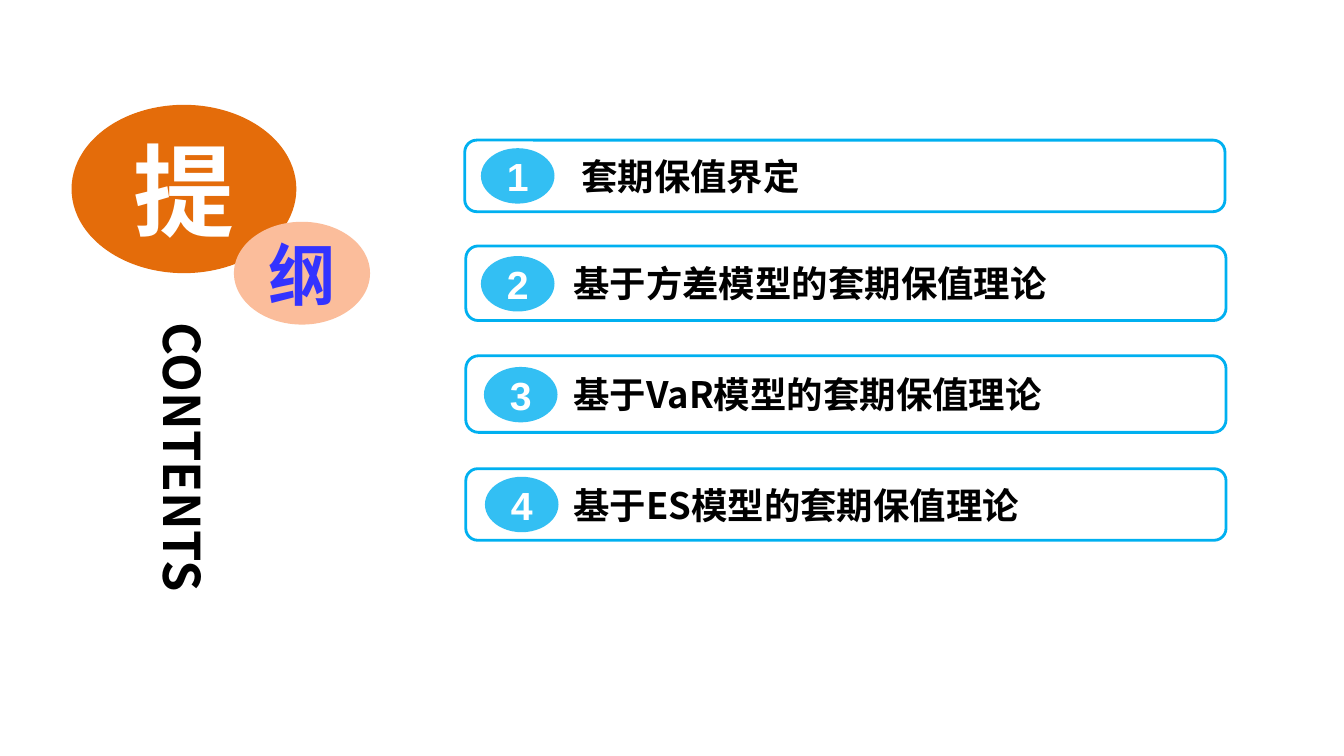
from lxml.etree import SubElement
from pptx import Presentation
from pptx.dml.color import RGBColor
from pptx.enum.shapes import MSO_SHAPE as SHAPE
from pptx.enum.text import MSO_ANCHOR as ANCHOR, PP_ALIGN as ALIGN
from pptx.oxml.ns import qn
from pptx.util import Inches, Pt

COLORS = {
    "white": "FFFFFF",
    "black": "000000",
    "blue": "00B0F0",
    "orange": "E46C0A",
    "peach": "FBBD9B",
    "violet": "3333FF",
}
CJK = "Noto Sans CJK SC"


def add_panel(kind, left, top, width, height, fill):
    panel = slide.shapes.add_shape(
        kind, Inches(left), Inches(top), Inches(width), Inches(height))
    panel.shadow.inherit = False
    panel.fill.solid()
    panel.fill.fore_color.rgb = RGBColor.from_string(COLORS[fill])
    panel.line.fill.background()
    return panel


def write(holder, text, size, color, font=CJK, align=ALIGN.CENTER, margin=0):
    frame = holder.text_frame
    frame.margin_left = Inches(margin)
    frame.margin_right = frame.margin_top = frame.margin_bottom = 0
    frame.vertical_anchor = ANCHOR.MIDDLE
    frame.text = text
    paragraph = frame.paragraphs[0]
    paragraph.alignment = align
    run = paragraph.runs[0]
    run.font.size = Pt(size)
    run.font.bold = True
    run.font.name = font
    run.font.color.rgb = RGBColor.from_string(COLORS[color])
    SubElement(run.font._element, qn("a:ea"), typeface=font)


deck = Presentation()
deck.slide_width = Inches(13.33)
deck.slide_height = Inches(7.5)
slide = deck.slides.add_slide(deck.slide_layouts[6])

topics = [
    ("套期保值界定", 4.61, 1.39, 0.71, 4.77, 1.47, 1.12),
    ("基于方差模型的套期保值理论", 4.62, 2.44, 0.74, 4.77, 2.54, 1.03),
    ("基于VaR模型的套期保值理论", 4.62, 3.53, 0.76, 4.8, 3.64, 1.03),
    ("基于ES模型的套期保值理论", 4.62, 4.65, 0.71, 4.81, 4.73, 1.03),
]
for number, (topic, left, top, height, badge_left, badge_top, indent) in enumerate(topics, 1):
    bar = add_panel(SHAPE.ROUNDED_RECTANGLE, left, top, 7.54, height, "white")
    bar.line.color.rgb = RGBColor.from_string(COLORS["blue"])
    bar.line.width = Pt(2)
    write(bar, topic, 26, "black", align=ALIGN.LEFT, margin=indent)

    badge = add_panel(SHAPE.OVAL, badge_left, badge_top, 0.73, 0.55, "blue")
    tint = badge.fill._xPr.find(qn("a:solidFill"))[0]
    SubElement(tint, qn("a:alpha"), val="80000")
    write(badge, str(number), 28, "white", font="Arial")
    badge.text_frame.word_wrap = False

heading_first = add_panel(SHAPE.OVAL, 0.71, 1.04, 2.23, 1.67, "orange")
write(heading_first, "提", 72, "white")
heading_second = add_panel(SHAPE.OVAL, 2.32, 2.2, 1.35, 1.02, "peach")
write(heading_second, "纲", 48, "violet")

contents = slide.shapes.add_textbox(Inches(1.38), Inches(3.2), Inches(0.89), Inches(3))
write(contents, "CONTENTS", 36, "black", align=ALIGN.LEFT)
contents.text_frame.word_wrap = True
contents.text_frame._txBody.bodyPr.set("vert", "eaVert")

deck.save("out.pptx")
